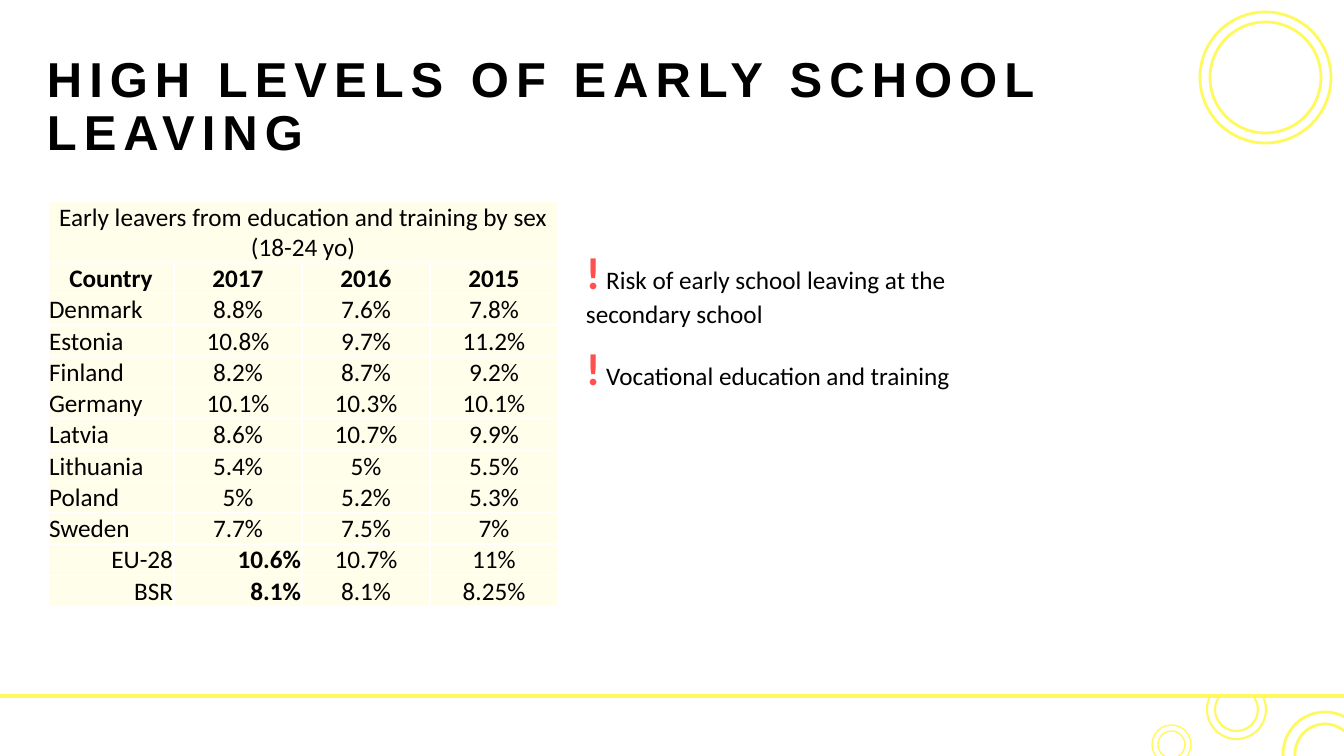
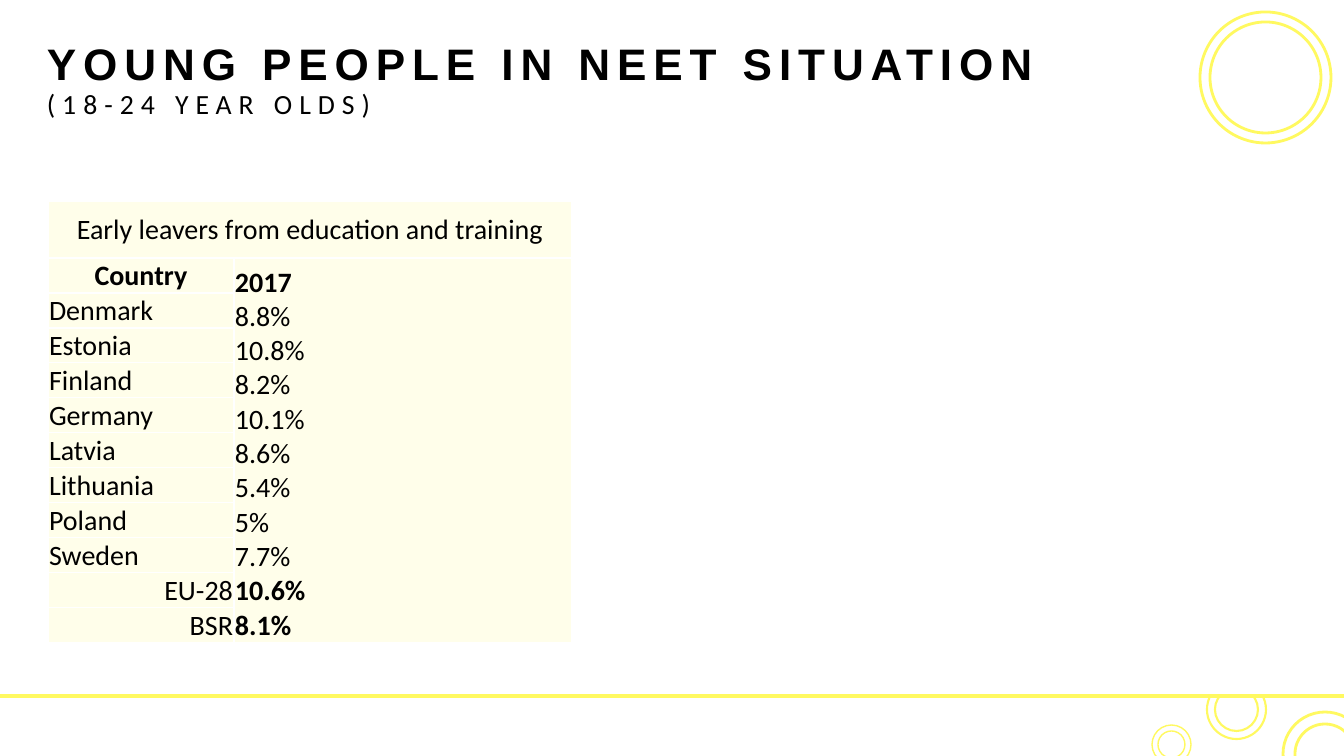
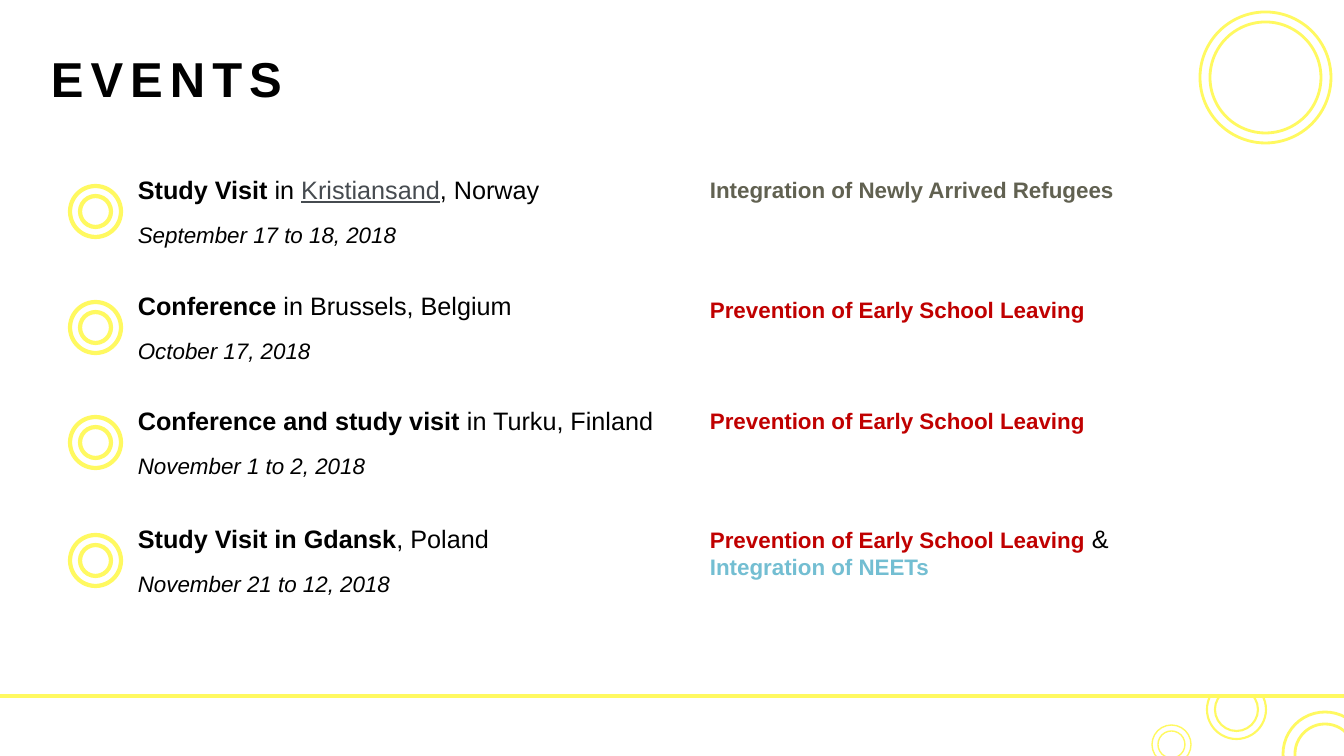
from dataclasses import dataclass

from lxml import etree
from pptx import Presentation
from pptx import util as u
from pptx.dml.color import RGBColor
from pptx.enum import shapes, text
from pptx.oxml import ns

EMU_PER_PX = 914400 / 100.8
SLIDE_WIDTH, SLIDE_HEIGHT = 1344, 756


@dataclass(frozen=True)
class Theme:
    ring: str = "FFF960"
    paper: str = "FFFFFF"
    cell: str = "FFFEEA"
    ink: str = "000000"
    warning: str = "FF5050"
    place: str = "464B50"
    refugees: str = "616151"
    leaving: str = "C00000"
    neets: str = "73BED2"
    heading_font: str = "Arial"
    body_font: str = "Calibri"
    title_size: float = 35
    small_title_size: float = 31.5
    subtitle_size: float = 19.8
    body_size: float = 18
    large_body_size: float = 20
    detail_size: float = 16
    mark_size: float = 32


THEME = Theme()

STATISTICS = [
    ("Country", "2017", "2016", "2015"),
    ("Denmark", "8.8%", "7.6%", "7.8%"),
    ("Estonia", "10.8%", "9.7%", "11.2%"),
    ("Finland", "8.2%", "8.7%", "9.2%"),
    ("Germany", "10.1%", "10.3%", "10.1%"),
    ("Latvia", "8.6%", "10.7%", "9.9%"),
    ("Lithuania", "5.4%", "5%", "5.5%"),
    ("Poland", "5%", "5.2%", "5.3%"),
    ("Sweden", "7.7%", "7.5%", "7%"),
    ("EU-28", "10.6%", "10.7%", "11%"),
    ("BSR", "8.1%", "8.1%", "8.25%"),
]
AVERAGES = ("EU-28", "BSR")
LEFT, CENTER, RIGHT = text.PP_ALIGN.LEFT, text.PP_ALIGN.CENTER, text.PP_ALIGN.RIGHT
MIDDLE, BOTTOM = text.MSO_ANCHOR.MIDDLE, text.MSO_ANCHOR.BOTTOM


def px(*lengths):
    return [u.Emu(round(length * EMU_PER_PX)) for length in lengths]


def style_font(font, name=None, size=None, color=None, bold=None, italic=None, underline=None):
    if name:
        font.name = name
    if size:
        font.size = u.Pt(size)
    if color:
        font.color.rgb = RGBColor.from_string(color)
    for attribute, value in (("bold", bold), ("italic", italic), ("underline", underline)):
        if value is not None:
            setattr(font, attribute, value)


def write_paragraph(paragraph, runs, **style):
    """Style the paragraph, then add (text, overrides) runs."""
    style_font(paragraph.font, **style)
    for words, overrides in runs:
        run = paragraph.add_run()
        run.text = words
        style_font(run.font, **overrides)


def add_text_box(slide, box):
    frame = slide.shapes.add_textbox(*px(*box)).text_frame
    frame.word_wrap = True
    return frame


def add_plain_shape(parent, kind, box, fill=None, line=None, weight=0):
    shape = parent.shapes.add_shape(kind, *px(*box))
    shape.shadow.inherit = False
    if fill:
        shape.fill.solid()
        shape.fill.fore_color.rgb = RGBColor.from_string(fill)
    else:
        shape.fill.background()
    if line:
        shape.line.color.rgb = RGBColor.from_string(line)
        shape.line.width = u.Pt(weight)
    else:
        shape.line.fill.background()


def add_double_ring(slide, left, top, size, gap, weight):
    group = slide.shapes.add_group_shape()
    for inset in (gap, 0):
        diameter = size - 2 * inset
        add_plain_shape(group, shapes.MSO_SHAPE.OVAL,
                        (left + inset, top + inset, diameter, diameter),
                        line=THEME.ring, weight=weight)


def add_decoration(slide):
    line_y = 696
    rule = slide.shapes.add_connector(shapes.MSO_CONNECTOR.STRAIGHT,
                                      *px(0, line_y, SLIDE_WIDTH, line_y))
    rule.line.color.rgb = RGBColor.from_string(THEME.ring)
    rule.line.width = u.Pt(3)
    etree.SubElement(rule._element.spPr, ns.qn("a:effectLst"))
    for ring in ((1283, 712, 84, 12, 2), (1152, 725, 39, 6, 1), (1207, 680, 59, 8, 1.5)):
        add_double_ring(slide, *ring)
    add_plain_shape(slide, shapes.MSO_SHAPE.RECTANGLE, (1206, 677, 61, 17), fill=THEME.paper)
    add_double_ring(slide, 1200, 12, 131, 10, 2)


def add_title(slide, box, title, size=THEME.title_size, subtitle=None):
    frame = add_text_box(slide, box)
    frame.vertical_anchor = BOTTOM
    paragraph = frame.paragraphs[0]
    paragraph.line_spacing = 0.9
    write_paragraph(paragraph, [(title, {})], name=THEME.heading_font, size=size,
                    color=THEME.ink, bold=True)
    if subtitle:
        paragraph.add_line_break()
        write_paragraph(paragraph, [(subtitle, dict(name=THEME.body_font, bold=False,
                                                    size=THEME.subtitle_size))])
    for run in paragraph.runs:
        run._r.get_or_add_rPr().set("spc", "500")


def format_cell(cell):
    cell.fill.solid()
    cell.fill.fore_color.rgb = RGBColor.from_string(THEME.cell)
    cell.margin_left, cell.margin_top, cell.margin_right, cell.margin_bottom = px(1, 1, 1, 0)
    properties = cell._tc.get_or_add_tcPr()
    for index, side in enumerate(("lnL", "lnR", "lnT", "lnB")):
        border = etree.Element(ns.qn(f"a:{side}"), w=str(u.Pt(1)))
        fill = etree.SubElement(border, ns.qn("a:solidFill"))
        etree.SubElement(fill, ns.qn("a:srgbClr"), val=THEME.paper)
        properties.insert(index, border)


def write_cell(cell, lines, size, alignment, anchor=BOTTOM):
    """Write (text, bold) lines, one paragraph each."""
    cell.vertical_anchor = anchor
    frame = cell.text_frame
    for index, (words, bold) in enumerate(lines):
        paragraph = frame.add_paragraph() if index else frame.paragraphs[0]
        paragraph.alignment = alignment
        write_paragraph(paragraph, [(words, {})], name=THEME.body_font, size=size,
                        color=THEME.ink, bold=bold)


def add_country_table(slide, left, top, widths, row_height, caption, size):
    """Add the captioned table with its country column and return it."""
    caption_height = 57
    row_count = len(STATISTICS) + 1
    frame = slide.shapes.add_table(
        row_count, len(widths),
        *px(left, top, sum(widths), caption_height + row_height * len(STATISTICS)))
    table = frame.table
    table.first_row = table.horz_banding = False
    for column, width in zip(table.columns, px(*widths)):
        column.width = width
    for index, row in enumerate(table.rows):
        row.height, = px(row_height if index else caption_height)
    for cell in table.iter_cells():
        format_cell(cell)
    table.cell(0, 0).merge(table.cell(0, len(widths) - 1))
    write_cell(table.cell(0, 0), [(caption, False)], size, CENTER, MIDDLE)
    for index, (country, *_) in enumerate(STATISTICS, 1):
        header = index == 1
        alignment = CENTER if header else RIGHT if country in AVERAGES else LEFT
        write_cell(table.cell(index, 0), [(country, header)], size, alignment,
                   MIDDLE if header else BOTTOM)
    return table


def add_warning(slide, box, words):
    write_paragraph(add_text_box(slide, box).paragraphs[0], [
        ("!", dict(size=THEME.mark_size, color=THEME.warning, bold=True)),
        (f" {words}", dict(size=THEME.body_size, color=THEME.ink)),
    ], name=THEME.body_font)


def add_event(slide, left, top, width, headline, date, topic_top, topic):
    add_double_ring(slide, left, top + 17, 51, 10, 3)
    frame = add_text_box(slide, (left + 58, top, width, 85))
    first = frame.paragraphs[0]
    first.space_after = u.Pt(12)
    write_paragraph(first, headline, name=THEME.heading_font, size=THEME.body_size,
                    color=THEME.ink)
    write_paragraph(frame.add_paragraph(), [(date, {})], name=THEME.heading_font,
                    size=THEME.detail_size, color=THEME.ink, italic=True)
    topic_frame = add_text_box(slide, (left + 630, topic_top, 455, 37))
    write_paragraph(topic_frame.paragraphs[0], topic, name=THEME.heading_font)


def build_leaving_slide(slide):
    add_title(slide, (37, 40, 1094, 126), "HIGH LEVELS OF EARLY SCHOOL LEAVING")
    size = THEME.body_size
    table = add_country_table(slide, 48, 201, (126, 128, 128, 128), 31,
                              "Early leavers from education and training by sex (18-24 yo)", size)
    for row, (country, *values) in enumerate(STATISTICS, 1):
        for column, value in enumerate(values, 1):
            latest_average = column == 1 and country in AVERAGES
            write_cell(table.cell(row, column), [(value, row == 1 or latest_average)], size,
                       RIGHT if latest_average else CENTER)
    add_warning(slide, (576, 240, 433, 95), "Risk of early school leaving at the secondary school")
    add_warning(slide, (576, 336, 433, 64), "Vocational education and training")


def build_neet_slide(slide):
    add_title(slide, (37, 40, 1094, 85), "YOUNG PEOPLE IN NEET SITUATION",
              THEME.small_title_size, "(18-24 YEAR OLDS)")
    size = THEME.large_body_size
    table = add_country_table(slide, 48, 201, (186, 338), 35,
                              "Early leavers from education and training", size)
    values = table.cell(1, 1)
    values.merge(table.cell(len(STATISTICS), 1))
    write_cell(values, [(latest, country in ("Country", *AVERAGES))
                        for country, latest, *_ in STATISTICS], size, LEFT)


def build_events_slide(slide):
    add_title(slide, (41, 34, 1094, 79), "EVENTS")
    bold = dict(bold=True)

    def topic(words, color):
        return words, dict(size=THEME.detail_size, color=color, bold=True)

    leaving = topic("Prevention of Early School Leaving", THEME.leaving)
    events = [
        (169, 442, [("Study Visit ", bold), ("in ", {}),
                    ("Kristiansand", dict(color=THEME.place, underline=True)), (", Norway", {})],
         "September 17 to 18, 2018",
         171, [topic("Integration of Newly Arrived Refugees", THEME.refugees)]),
        (285, 442, [("Conference", bold), (" in Brussels, Belgium", {})],
         "October 17, 2018", 291, [leaving]),
        (400, 556, [("Conference and study visit ", bold), ("in Turku, Finland", {})],
         "November 1 to 2, 2018", 402, [leaving]),
        (518, 482, [("Study Visit in Gdansk", bold), (", Poland", {})],
         "November 21 to 12, 2018",
         518, [leaving, (" & ", dict(size=THEME.body_size, color=THEME.ink)),
               topic("Integration of NEETs", THEME.neets)]),
    ]
    for event in events:
        add_event(slide, 70, *event)


def main():
    presentation = Presentation()
    presentation.slide_width, presentation.slide_height = px(SLIDE_WIDTH, SLIDE_HEIGHT)
    blank = presentation.slide_layouts[6]
    for build in (build_leaving_slide, build_neet_slide, build_events_slide):
        slide = presentation.slides.add_slide(blank)
        add_decoration(slide)
        build(slide)
    presentation.save("out.pptx")


if __name__ == "__main__":
    main()
